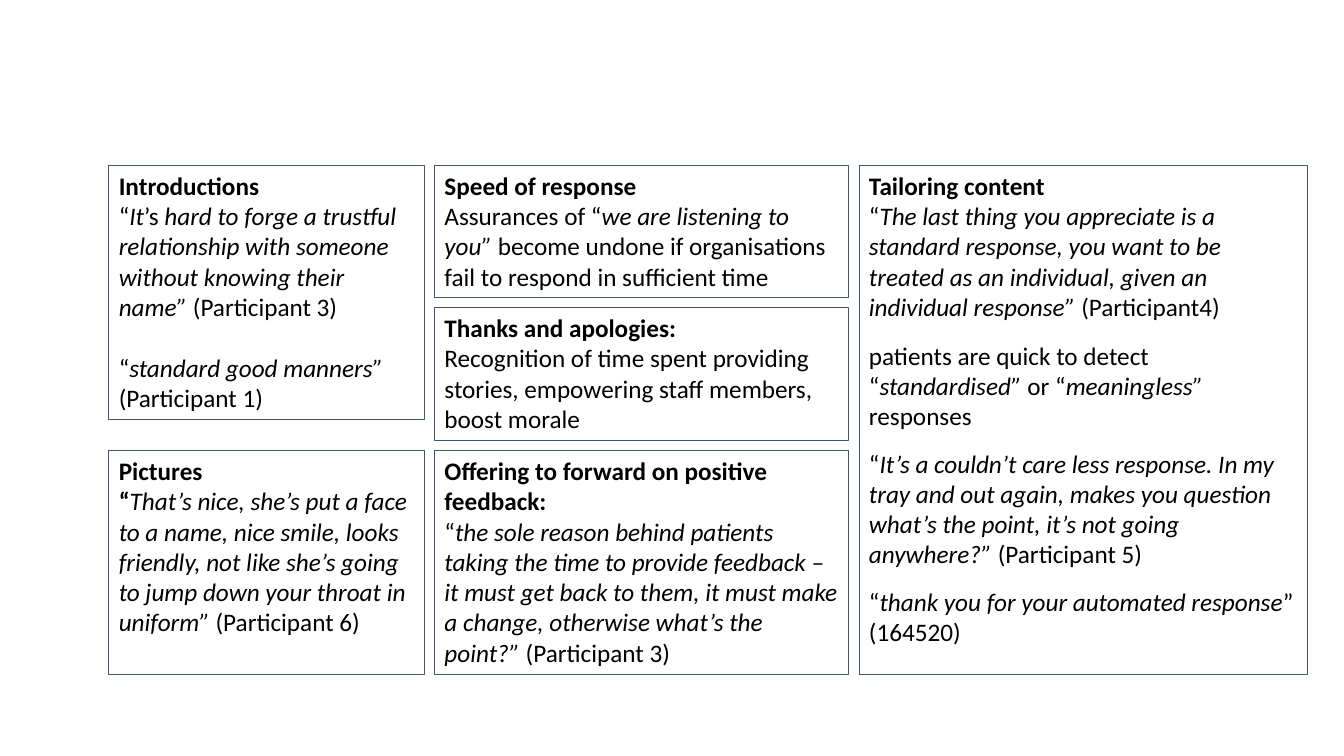
"""Build a slide of six quote boxes on feedback responses."""
from itertools import accumulate
from pptx import Presentation
from pptx.dml.color import RGBColor
from pptx.enum.shapes import MSO_SHAPE as Shape
from pptx.enum.text import MSO_ANCHOR as Anchor, PP_ALIGN as Align
from pptx.util import Inches, Pt

COLORS = {"line": "44546A", "text": "000000"}
LEFT, TOP, GAP = 1.08, 1.64, 0.1
WIDTHS = [3.13, 4.11, 4.45]
HEIGHTS = [1.31, 1.32, 2.22]

# Each box: column, first row, rows spanned, height trimmed, paragraphs.
# Each paragraph: space before, then runs of (style, text).
BOXES = [
    (0, 0, 2, 0.21, [
        (0, [("b", "Introductions")]),
        (0, [("", "“"), ("i", "It"), ("", "’s "),
             ("i", "hard to forge a trustful relationship with someone "
                   "without knowing their name” "),
             ("", "(Participant 3)")]),
        (22, [("", "“"), ("i", "standard good manners” "),
              ("", "(Participant 1)")]),
    ]),
    (0, 2, 1, 0, [
        (0, [("b", "Pictures")]),
        (0, [("b", "“"),
             ("i", "That’s nice, she’s put a face to a name, nice smile, "
                   "looks friendly, not like she’s going to jump down your "
                   "throat in uniform” "),
             ("", "(Participant 6)")]),
    ]),
    (2, 0, 3, 0, [
        (0, [("b", "Tailoring content")]),
        (0, [("", "“"),
             ("i", "The last thing you appreciate is a standard response, "
                   "you want to be treated as an individual, given an "
                   "individual response” "),
             ("", "(Participant4)")]),
        (13.4, [("", "patients are quick to detect “"),
                ("i", "standardised” "), ("", "or “"),
                ("i", "meaningless” "), ("", "responses")]),
        (12.2, [("", "“"),
                ("i", "It’s a couldn’t care less response. In my tray and "
                      "out again, makes you question what’s the point, "
                      "it’s not going anywhere?”"),
                ("", " (Participant 5)")]),
        (12.2, [("", "“"), ("i", "thank you for your automated response"),
                ("", "” (164520)")]),
    ]),
    (1, 0, 1, 0, [
        (0, [("b", "Speed of response")]),
        (0, [("", "Assurances of “"), ("i", "we are listening to you”"),
             ("", " become undone if organisations fail to respond in "
                  "sufficient time")]),
    ]),
    (1, 1, 1, 0, [
        (0, [("b", "Thanks and apologies:")]),
        (0, [("", "Recognition of time spent providing stories, empowering "
                  "staff members, boost morale")]),
    ]),
    (1, 2, 1, 0, [
        (0, [("b", "Offering to forward on positive feedback:")]),
        (0, [("", "“"),
             ("i", "the sole reason behind patients taking the time to "
                   "provide feedback – it must get back to them, it must "
                   "make a change, otherwise what’s the point?” "),
             ("", "(Participant 3)")]),
    ]),
]


def starts(first, sizes):
    """Return the start of each track, with equal gaps between."""
    return list(accumulate((s + GAP for s in sizes), initial=first))


def write(par, runs, before=0, size=18, font="Calibri", color="text"):
    """Fill one paragraph with styled runs."""
    par.alignment = Align.LEFT
    par.space_before = Pt(before)
    for style, text in runs:
        run = par.add_run()
        run.text = text
        run.font.name, run.font.size = font, Pt(size)
        run.font.bold, run.font.italic = style == "b", style == "i"
        run.font.color.rgb = RGBColor.from_string(COLORS[color])


def main():
    """Lay out the boxes and save the deck."""
    deck = Presentation()
    deck.slide_width, deck.slide_height = Inches(13.33), Inches(7.5)
    slide = deck.slides.add_slide(deck.slide_layouts[6])
    lefts, tops = starts(LEFT, WIDTHS), starts(TOP, HEIGHTS)
    for col, row, span, trim, pars in BOXES:
        high = tops[row + span] - GAP - tops[row] - trim
        box = slide.shapes.add_shape(
            Shape.RECTANGLE, Inches(lefts[col]), Inches(tops[row]),
            Inches(WIDTHS[col]), Inches(high))
        box.shadow.inherit = False
        box.fill.background()
        box.line.color.rgb = RGBColor.from_string(COLORS["line"])
        box.line.width = Pt(0.75)
        frame = box.text_frame
        frame.word_wrap, frame.vertical_anchor = True, Anchor.TOP
        for i, (before, runs) in enumerate(pars):
            par = frame.add_paragraph() if i else frame.paragraphs[0]
            write(par, runs, before=before)
    deck.save("out.pptx")


if __name__ == "__main__":
    main()
